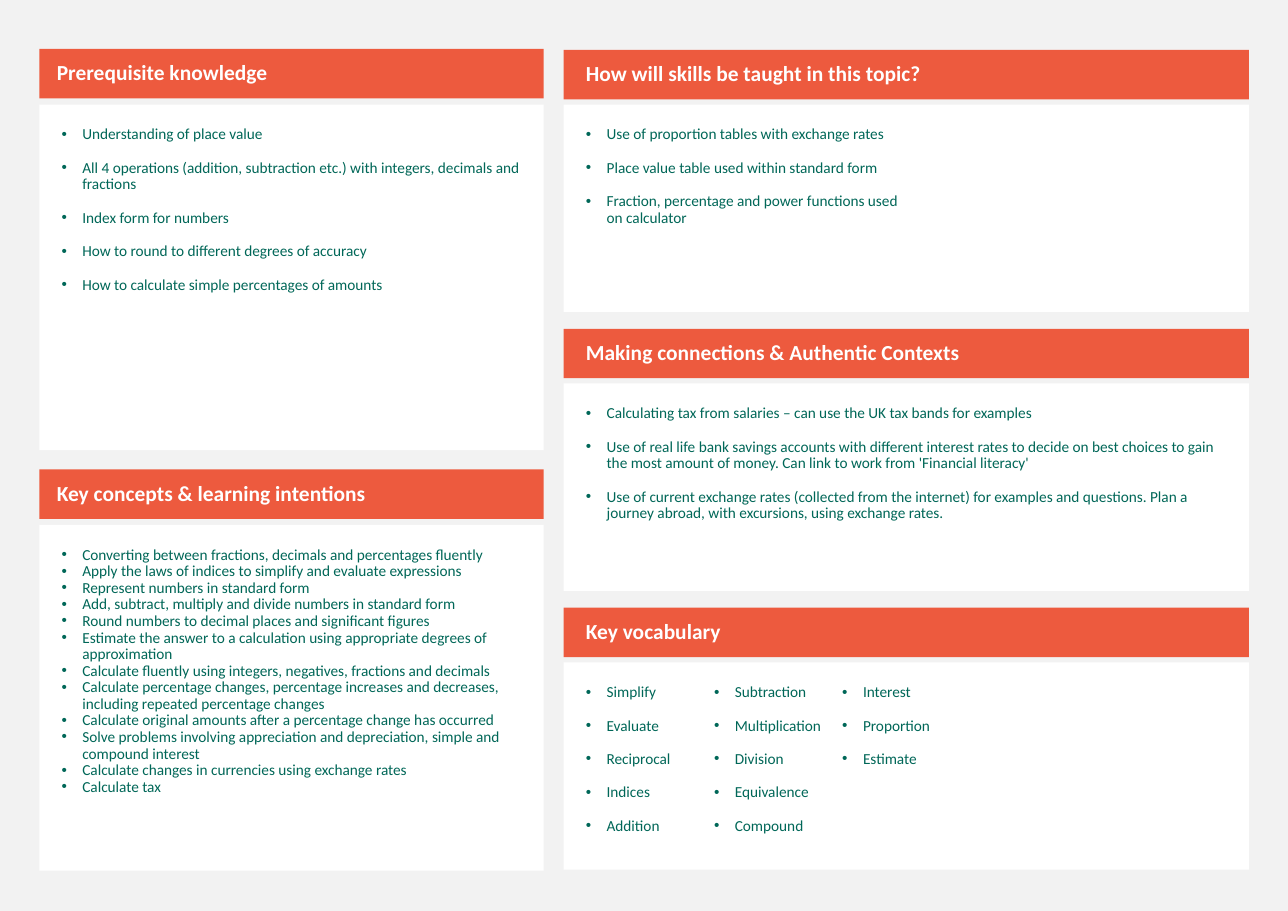
import pptx
import pptx.dml.color
import pptx.enum.shapes
import pptx.enum.text
import pptx.oxml.ns
import pptx.util
from lxml import etree

Cm, Pt = pptx.util.Cm, pptx.util.Pt
ANCHOR = pptx.enum.text.MSO_ANCHOR
RECT = pptx.enum.shapes.MSO_SHAPE.RECTANGLE

HUES = {"page": "F2F2F2", "head": "ED5A3E", "body": "FFFFFF",
        "title": "FFFFFF", "text": "006758"}

# Each panel: title, text columns, space before a bullet (pt), bullets
LEFT = [
    ("Prerequisite knowledge", 1, 11, [
        "Understanding of place value",
        "All 4 operations (addition, subtraction etc.) with integers, decimals and fractions",
        "Index form for numbers",
        "How to round to different degrees of accuracy",
        "How to calculate simple percentages of amounts",
    ]),
    ("Key concepts & learning intentions", 1, 0, [
        "Converting between fractions, decimals and percentages fluently",
        "Apply the laws of indices to simplify and evaluate expressions",
        "Represent numbers in standard form",
        "Add, subtract, multiply and divide numbers in standard form",
        "Round numbers to decimal places and significant figures",
        "Estimate the answer to a calculation using appropriate degrees of approximation",
        "Calculate fluently using integers, negatives, fractions and decimals",
        "Calculate percentage changes, percentage increases and decreases, "
        "including repeated percentage changes",
        "Calculate original amounts after a percentage change has occurred",
        "Solve problems involving appreciation and depreciation, simple and compound interest",
        "Calculate changes in currencies using exchange rates",
        "Calculate tax",
    ]),
]
RIGHT = [
    ("How will skills be taught in this topic?", 2, 11, [
        "Use of proportion tables with exchange rates",
        "Place value table used within standard form",
        "Fraction, percentage and power functions used on calculator",
    ]),
    ("Making connections & Authentic Contexts", 1, 11, [
        "Calculating tax from salaries – can use the UK tax bands for examples",
        "Use of real life bank savings accounts with different interest rates to decide on "
        "best choices to gain the most amount of money. Can link to work from "
        "'Financial literacy'",
        "Use of current exchange rates (collected from the internet) for examples and "
        "questions. Plan a journey abroad, with excursions, using exchange rates.",
    ]),
    ("Key vocabulary", 5, 11, [
        "Simplify", "Evaluate", "Reciprocal", "Indices", "Addition",
        "Subtraction", "Multiplication", "Division", "Equivalence", "Compound",
        "Interest", "Proportion", "Estimate",
    ]),
]

# Each side in cm: panels, left, width, first top, pitch, body drop, body height, title inset
SIDES = [
    (LEFT, 0.91, 11.63, 1.13, 9.69, 1.28, 7.97, 0.4),
    (RIGHT, 13, 15.8, 1.15, 6.43, 1.26, 4.78, 0.51),
]
HEAD = 1.14
INSET = 0.51
INDENT = 0.48


def color(name):
    return pptx.dml.color.RGBColor.from_string(HUES[name])


def add_box(slide, hue, place, insets, anchor):
    """Add a plain filled rectangle and return its text frame."""
    box = slide.shapes.add_shape(RECT, *map(Cm, place))
    box.shadow.inherit = False
    box.fill.solid()
    box.fill.fore_color.rgb = color(hue)
    box.line.fill.background()
    frame = box.text_frame
    frame.word_wrap = True
    frame.vertical_anchor = anchor
    (frame.margin_left, frame.margin_top,
     frame.margin_right, frame.margin_bottom) = map(Cm, insets)
    return frame


def style(para, size, hue, bold, before):
    para.alignment = pptx.enum.text.PP_ALIGN.LEFT
    para.line_spacing = 0.9
    para.space_before = Pt(before)
    for run in para.runs:
        run.font.name = "Calibri"
        run.font.size = Pt(size)
        run.font.bold = bold
        run.font.color.rgb = color(hue)


def add_bullet(para):
    props = para._p.get_or_add_pPr()
    props.set("marL", str(Cm(INDENT)))
    props.set("indent", str(-Cm(INDENT)))
    font = etree.SubElement(props, pptx.oxml.ns.qn("a:buFont"))
    font.set("typeface", "Arial")
    mark = etree.SubElement(props, pptx.oxml.ns.qn("a:buChar"))
    mark.set("char", "•")


def add_panel(slide, panel, left, top, width, drop, height, inset):
    title, cols, before, items = panel
    frame = add_box(slide, "body", (left, top + drop, width, height),
                    [INSET] * 4, ANCHOR.TOP)
    if cols > 1:
        frame._txBody.bodyPr.set("numCol", str(cols))
    frame.text = "\n".join(items)
    for para in frame.paragraphs:
        style(para, 10, "text", False, before)
        add_bullet(para)

    frame = add_box(slide, "head", (left, top, width, HEAD),
                    (inset, 0.13, 0.25, 0.13), ANCHOR.MIDDLE)
    frame.text = title
    style(frame.paragraphs[0], 14, "title", True, 11)


def main():
    deck = pptx.Presentation()
    deck.slide_width, deck.slide_height = Cm(29.7), Cm(21)
    slide = deck.slides.add_slide(deck.slide_layouts[6])
    slide.background.fill.solid()
    slide.background.fill.fore_color.rgb = color("page")
    for panels, left, width, first, pitch, drop, height, inset in SIDES:
        for row, panel in enumerate(panels):
            add_panel(slide, panel, left, first + row * pitch, width,
                      drop, height, inset)
    deck.save("out.pptx")


if __name__ == "__main__":
    main()
